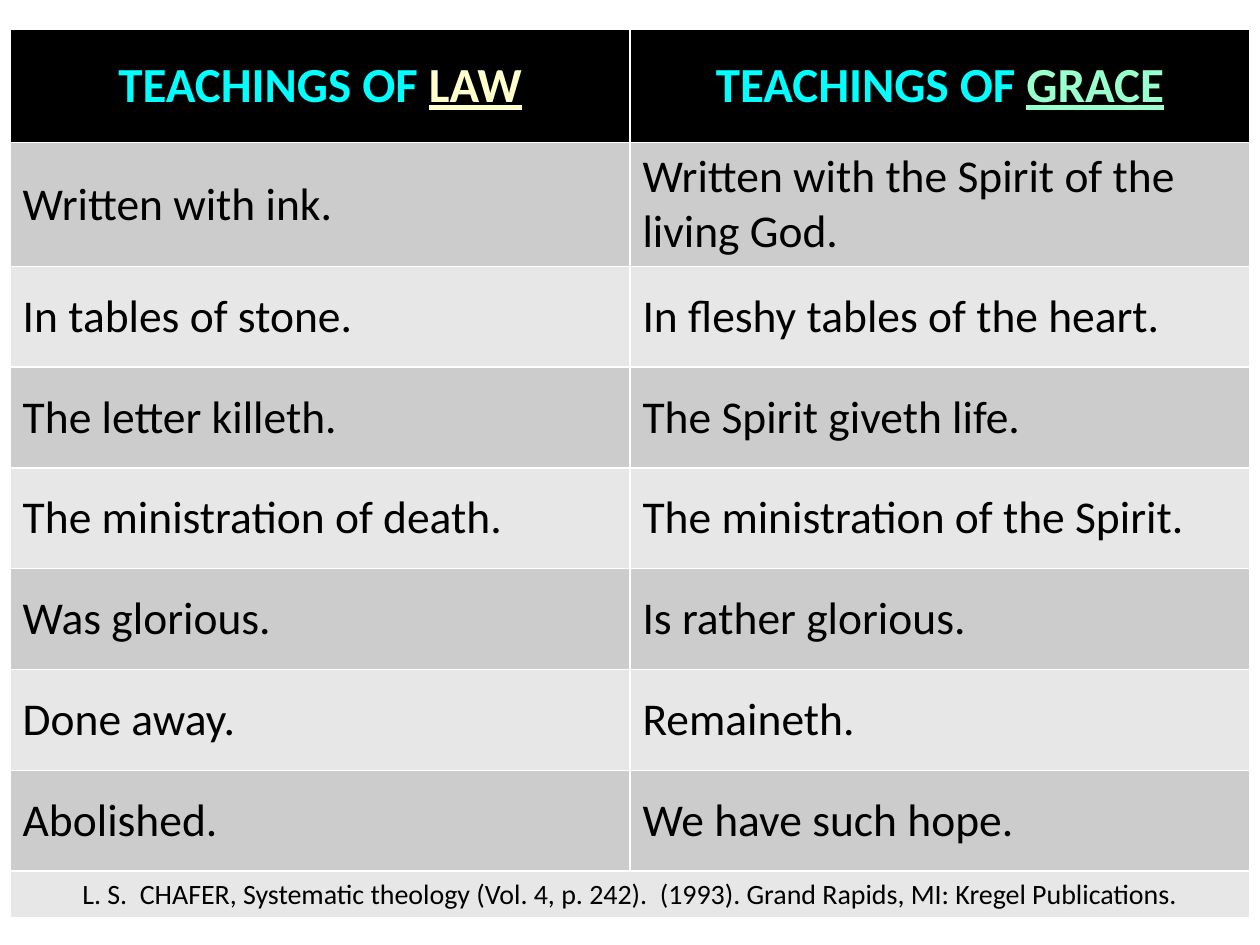
"""Build a slide with a table contrasting the teachings of law and grace."""
from pptx import Presentation
from pptx import util as u
from pptx.dml.color import RGBColor
from pptx.enum import text

BLACK = RGBColor(0x00, 0x00, 0x00)
CYAN = RGBColor(0x00, 0xFF, 0xFF)
CREAM = RGBColor(0xFF, 0xFF, 0xCC)
MINT = RGBColor(0x99, 0xFF, 0xCC)
BANDS = (RGBColor(0xE7, 0xE7, 0xE7), RGBColor(0xCC, 0xCC, 0xCC))

FONT = "Calibri"
HEADINGS = [("LAW", CREAM), ("GRACE", MINT)]
CONTRASTS = [
    ("Written with ink.", "Written with the Spirit of the living God."),
    ("In tables of stone.", "In fleshy tables of the heart."),
    ("The letter killeth.", "The Spirit giveth life."),
    ("The ministration of death.", "The ministration of the Spirit."),
    ("Was glorious.", "Is rather glorious."),
    ("Done away.", "Remaineth."),
    ("Abolished.", "We have such hope."),
]
CITATION = ("L. S.  CHAFER, Systematic theology (Vol. 4, p. 242).  (1993). "
            "Grand Rapids, MI: Kregel Publications.")


def add_run(p, words, size, color=BLACK, bold=False, underline=False):
    """Append a formatted run to a paragraph."""
    r = p.add_run()
    r.text = words
    r.font.name = FONT
    r.font.size = u.Pt(size)
    r.font.bold = bold
    r.font.underline = underline
    r.font.color.rgb = color


def style_cell(cell, fill, align=text.PP_ALIGN.LEFT):
    """Fill and align a cell, and return its first paragraph."""
    cell.fill.solid()
    cell.fill.fore_color.rgb = fill
    cell.vertical_anchor = text.MSO_ANCHOR.MIDDLE
    p = cell.text_frame.paragraphs[0]
    p.alignment = align
    return p


def add_contrast_table(s):
    """Add an empty table with its column widths and row heights."""
    heights = [0.9] + [0.8] * len(CONTRASTS) + [0.3]
    table = s.shapes.add_table(
        len(heights), 2, u.Inches(0.08), u.Inches(0.23),
        u.Inches(9.84), u.Inches(sum(heights))).table
    for row, height in zip(table.rows, heights):
        row.height = u.Inches(height)
    return table


def fill_headings(table):
    """Write the heading row."""
    for col, (word, color) in enumerate(HEADINGS):
        p = style_cell(table.cell(0, col), BLACK, text.PP_ALIGN.CENTER)
        add_run(p, "TEACHINGS OF ", 28, CYAN, bold=True)
        add_run(p, word, 28, color, bold=True, underline=True)


def fill_contrasts(table):
    """Write the paired statements in alternating bands."""
    for row, pair in enumerate(CONTRASTS, start=1):
        for col, words in enumerate(pair):
            p = style_cell(table.cell(row, col), BANDS[row % 2])
            add_run(p, words, 26)


def fill_citation(table):
    """Write the citation across the last row."""
    last = len(CONTRASTS) + 1
    cell = table.cell(last, 0)
    cell.merge(table.cell(last, 1))
    p = style_cell(cell, BANDS[last % 2], text.PP_ALIGN.CENTER)
    add_run(p, CITATION, 16)


def main():
    """Create the slide and save it."""
    prs = Presentation()
    prs.slide_width, prs.slide_height = u.Inches(10), u.Inches(7.5)
    s = prs.slides.add_slide(prs.slide_layouts[6])
    table = add_contrast_table(s)
    fill_headings(table)
    fill_contrasts(table)
    fill_citation(table)
    prs.save("out.pptx")


if __name__ == "__main__":
    main()
